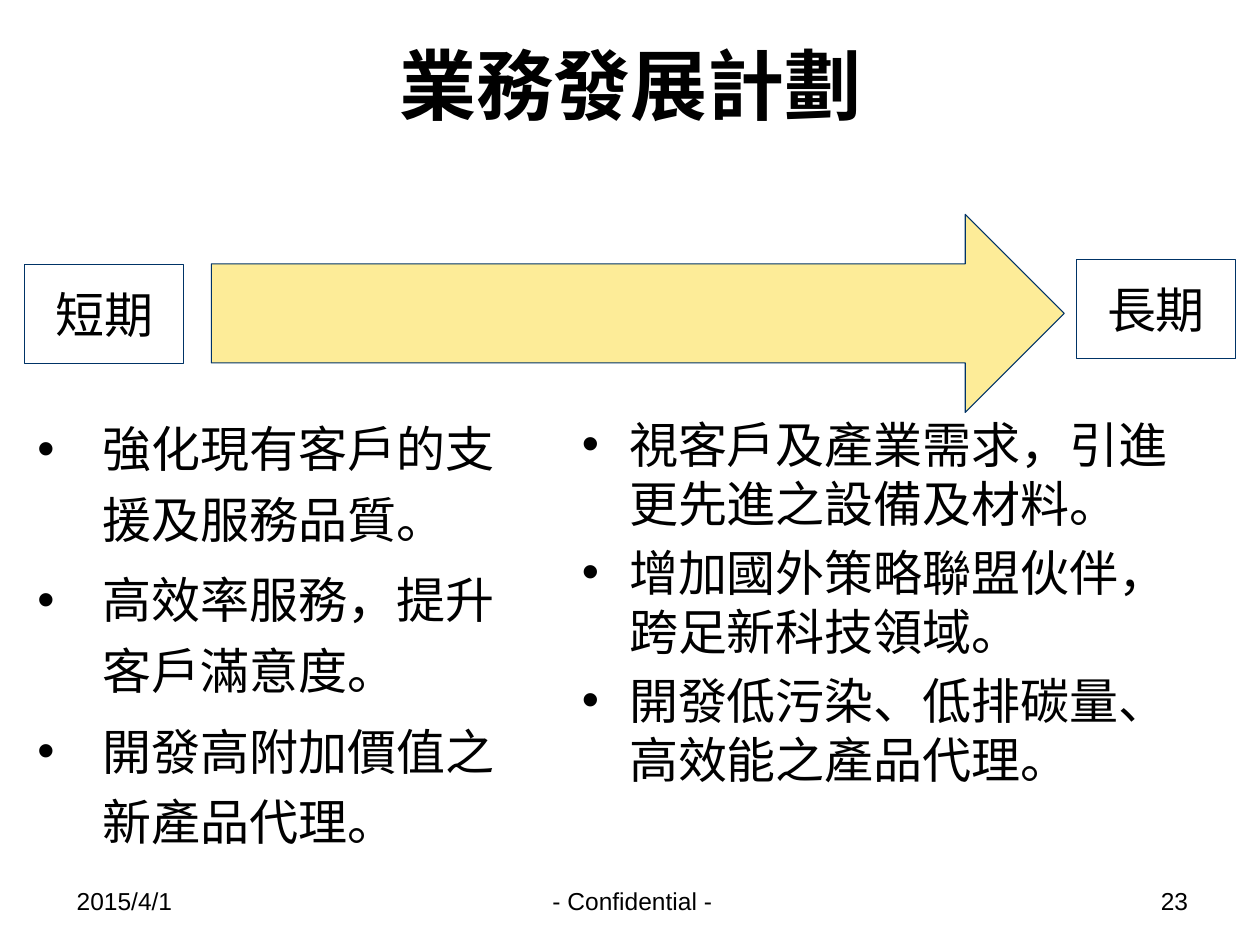
from dataclasses import dataclass

from lxml.etree import SubElement
from pptx import Presentation
from pptx.dml.color import RGBColor as RGB
from pptx.enum.shapes import MSO_SHAPE as SHAPE
from pptx.enum.text import MSO_ANCHOR as ANCHOR, PP_ALIGN as ALIGN
from pptx.oxml.ns import qn
from pptx.util import Pt


@dataclass(frozen=True)
class Theme:
    """Colours, fonts and type sizes of the deck."""
    ink: RGB = RGB(0, 0, 0)
    paper: RGB = RGB(0xFF, 0xFF, 0xFF)
    edge: RGB = RGB(0x00, 0x33, 0x66)
    arrow: RGB = RGB(0xFD, 0xEC, 0x98)
    cjk: str = "Noto Sans CJK SC"
    latin: str = "Arial"
    title: float = 44
    body: float = 28
    footer: float = 14


THEME = Theme()


def add_run(p, text, size, font, bold=False):
    """Add one styled run to a paragraph."""
    r = p.add_run()
    r.text = text
    r.font.size = Pt(size)
    r.font.name = font
    r.font.bold = bold
    r.font.color.rgb = THEME.ink
    SubElement(r._r.get_or_add_rPr(), qn("a:ea"), typeface=font)


def add_box(s, box):
    """Add a wrapping text box and return its text frame."""
    tf = s.shapes.add_textbox(*map(Pt, box)).text_frame
    tf.word_wrap = True
    return tf


def add_outlined(s, kind, box, fill):
    """Add a preset shape with the thin theme outline."""
    sp = s.shapes.add_shape(kind, *map(Pt, box))
    sp.shadow.inherit = False
    sp.fill.solid()
    sp.fill.fore_color.rgb = fill
    sp.line.color.rgb = THEME.edge
    sp.line.width = Pt(0.63)
    return sp


def add_title(s, box, text):
    """Place the centred slide title."""
    tf = add_box(s, box)
    tf.vertical_anchor = ANCHOR.MIDDLE
    p = tf.paragraphs[0]
    p.alignment = ALIGN.CENTER
    add_run(p, text, THEME.title, THEME.cjk, bold=True)


def add_label(s, box, text):
    """Place one framed term label."""
    tf = add_outlined(s, SHAPE.RECTANGLE, box, THEME.paper).text_frame
    tf.vertical_anchor = ANCHOR.MIDDLE
    p = tf.paragraphs[0]
    p.alignment = ALIGN.CENTER
    add_run(p, text, THEME.body, THEME.cjk)


def add_timeline(s, box, start, end):
    """Place the arrow between the short-term and long-term labels."""
    x, y, w, h = box
    label_w, label_h = 90.7, 56.7
    add_outlined(s, SHAPE.RIGHT_ARROW, (x + 106.6, y, 487.4, h), THEME.arrow)
    add_label(s, (x, y + 28.5, label_w, label_h), start)
    add_label(s, (x + w - label_w, y + 25.6, label_w, label_h), end)


def add_bullets(s, box, items, indent, pitch):
    """Place a bulleted column with a hanging indent and a fixed line pitch."""
    tf = add_box(s, box)
    for i, text in enumerate(items):
        p = tf.add_paragraph() if i else tf.paragraphs[0]
        p.line_spacing = Pt(pitch)
        p.space_before = Pt(0.2 * THEME.body if i else 0)
        pPr = p._p.get_or_add_pPr()
        pPr.set("marL", str(Pt(indent)))
        pPr.set("indent", str(-Pt(indent)))
        SubElement(pPr, qn("a:buFont"), typeface=THEME.latin)
        SubElement(pPr, qn("a:buChar"), char="•")
        add_run(p, text, THEME.body, THEME.cjk)


def add_footer(s, box, date, note, number):
    """Place date, note and slide number along the bottom edge."""
    x, y, w, h = box
    side, middle = 168, 228
    parts = (
        (x, side, ALIGN.LEFT, date),
        (x + (w - middle) / 2, middle, ALIGN.CENTER, note),
        (x + w - side, side, ALIGN.RIGHT, number),
    )
    for left, width, align, text in parts:
        p = add_box(s, (left, y, width, h)).paragraphs[0]
        p.alignment = align
        add_run(p, text, THEME.footer, THEME.latin)


def main():
    """Build and save the business plan slide."""
    prs = Presentation()
    prs.slide_width, prs.slide_height = Pt(720), Pt(540)
    s = prs.slides.add_slide(prs.slide_layouts[6])
    add_title(s, (36.7, 3, 648, 90), "業務發展計劃")
    add_bullets(s, (14.2, 229, 294.5, 255), (
        "強化現有客戶的支援及服務品質。",
        "高效率服務，提升客戶滿意度。",
        "開發高附加價值之新產品代理。",
    ), indent=37.5, pitch=40.4)
    add_bullets(s, (325.4, 233.3, 350.8, 246), (
        "視客戶及產業需求，引進更先進之設備及材料。",
        "增加國外策略聯盟伙伴，跨足新科技領域。",
        "開發低污染、低排碳量、高效能之產品代理。",
    ), indent=27, pitch=33.7)
    add_footer(s, (36.7, 502.6, 649.3, 37.4), "2015/4/1", "- Confidential -", "23")
    add_timeline(s, (14.2, 122.5, 691.7, 113.2), "短期", "長期")
    prs.save("out.pptx")


if __name__ == "__main__":
    main()
